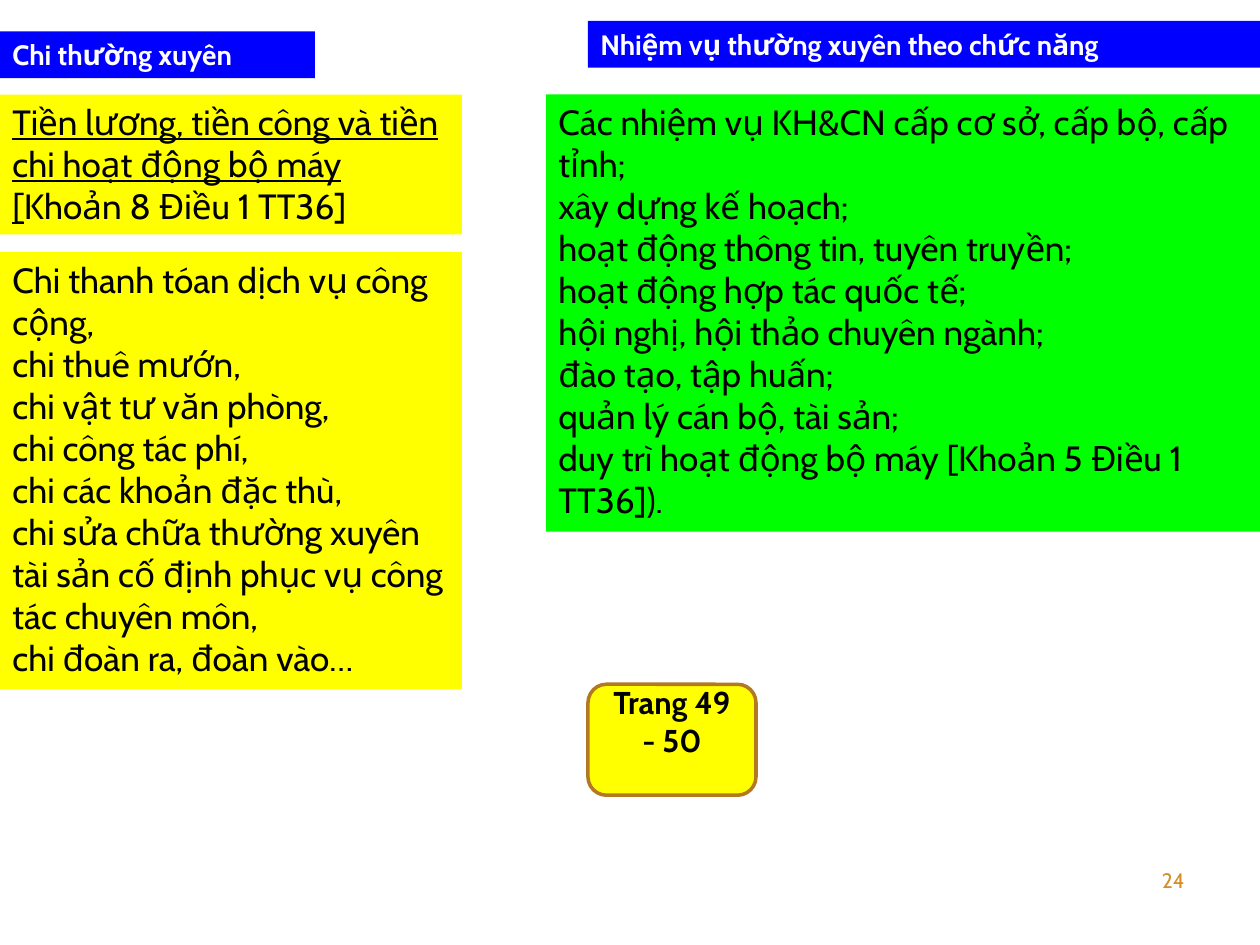
"""Builds a slide on regular spending and regular tasks by function."""
from pptx import Presentation
from pptx.dml.color import RGBColor
from pptx.enum.shapes import MSO_SHAPE
from pptx.enum.text import MSO_ANCHOR, PP_ALIGN
from pptx.util import Pt

RECTANGLE, ROUNDED = MSO_SHAPE.RECTANGLE, MSO_SHAPE.ROUNDED_RECTANGLE
TOP, MIDDLE = MSO_ANCHOR.TOP, MSO_ANCHOR.MIDDLE
LEFT, CENTER, RIGHT = PP_ALIGN.LEFT, PP_ALIGN.CENTER, PP_ALIGN.RIGHT

THEME = {
    "font": "Cabin",
    "black": "000000", "white": "FFFFFF", "blue": "0000FF", "yellow": "FFFF00",
    "green": "00FF00", "brown": "B27822", "orange": "D48F29",
    "body": 20, "badge": 18, "heading": 16, "number": 12,
}
SLIDE_WIDTH, SLIDE_HEIGHT = 720, 540
LEFT_WIDTH, RIGHT_START, INDENTED_START = 264, 312, 336
BODY_TOP, LIST_HEIGHT, HEADING_HEIGHT = 54, 249.84, 26.64

HEADINGS = [
    ("Chi thường xuyên", (0, 18, 180, HEADING_HEIGHT)),
    ("Nhiệm vụ thường xuyên theo chức năng",
     (INDENTED_START, 12, SLIDE_WIDTH - INDENTED_START, HEADING_HEIGHT)),
]
SALARY = [[("Tiền lương, tiền công và tiền chi hoạt động bộ máy [", True),
           ("Khoản 8 Điều 1 TT36]", False)]]
EXPENSES = [
    "Chi thanh tóan dịch vụ công cộng,",
    "chi thuê mướn,",
    "chi vật tư văn phòng,",
    "chi công tác phí,",
    "chi các khoản đặc thù,",
    "chi sửa chữa thường xuyên tài sản cố định phục vụ công tác chuyên môn,",
    "chi đoàn ra, đoàn vào…",
]
TASKS = [
    "Các nhiệm vụ KH&CN cấp cơ sở, cấp bộ, cấp tỉnh;",
    "xây dựng kế hoạch;",
    "hoạt động thông tin, tuyên truyền;",
    "hoạt động hợp tác quốc tế;",
    "hội nghị, hội thảo chuyên ngành;",
    "đào tạo, tập huấn;",
    "quản lý cán bộ, tài sản;",
    "duy trì hoạt động bộ máy [Khoản 5 Điều 1 TT36]).",
]
PANELS = [
    (TASKS, "green", (RIGHT_START, BODY_TOP, SLIDE_WIDTH - RIGHT_START, LIST_HEIGHT)),
    (SALARY, "yellow", (0, BODY_TOP, LEFT_WIDTH, 79.92)),
    (EXPENSES, "yellow", (0, 144, LEFT_WIDTH, LIST_HEIGHT)),
]
BADGE = ("Trang 49 - 50", (INDENTED_START, 391, 96, 63.4))
PAGE_NUMBER = ("24", (516, 492, 168, 36))


def color(name):
    return RGBColor.from_string(THEME[name])


def write_text(shape, lines, size, ink="black", bold=False, align=LEFT,
               anchor=TOP, bottom=3.6):
    """Write lines, each a string or a list of (text, underlined) runs."""
    frame = shape.text_frame
    frame.word_wrap = True
    frame.vertical_anchor = anchor
    frame.margin_bottom = Pt(bottom)
    for index, line in enumerate(lines):
        paragraph = frame.add_paragraph() if index else frame.paragraphs[0]
        paragraph.alignment = align
        for text, underlined in [(line, False)] if isinstance(line, str) else line:
            run = paragraph.add_run()
            run.text = text
            run.font.name = THEME["font"]
            run.font.size = Pt(THEME[size])
            run.font.color.rgb = color(ink)
            run.font.bold = bold
            run.font.underline = underlined


def add_box(slide, bounds, fill, kind=RECTANGLE, outline=None):
    shape = slide.shapes.add_shape(kind, *map(Pt, bounds))
    shape.shadow.inherit = False
    shape.fill.solid()
    shape.fill.fore_color.rgb = color(fill)
    if outline:
        shape.line.color.rgb = color(outline)
        shape.line.width = Pt(2)
    else:
        shape.line.fill.background()
    return shape


def main():
    presentation = Presentation()
    presentation.slide_width = Pt(SLIDE_WIDTH)
    presentation.slide_height = Pt(SLIDE_HEIGHT)
    slide = presentation.slides.add_slide(presentation.slide_layouts[6])

    for lines, fill, bounds in PANELS:
        write_text(add_box(slide, bounds, fill), lines, "body")
    for heading, bounds in HEADINGS:
        write_text(add_box(slide, bounds, "blue"), [heading], "heading",
                   ink="white", bold=True)

    number, bounds = PAGE_NUMBER
    write_text(slide.shapes.add_textbox(*map(Pt, bounds)), [number], "number",
               ink="orange", align=RIGHT)
    label, bounds = BADGE
    write_text(add_box(slide, bounds, "yellow", kind=ROUNDED, outline="brown"),
               [label], "badge", bold=True, align=CENTER, anchor=MIDDLE, bottom=25.2)

    presentation.save("out.pptx")


if __name__ == "__main__":
    main()
